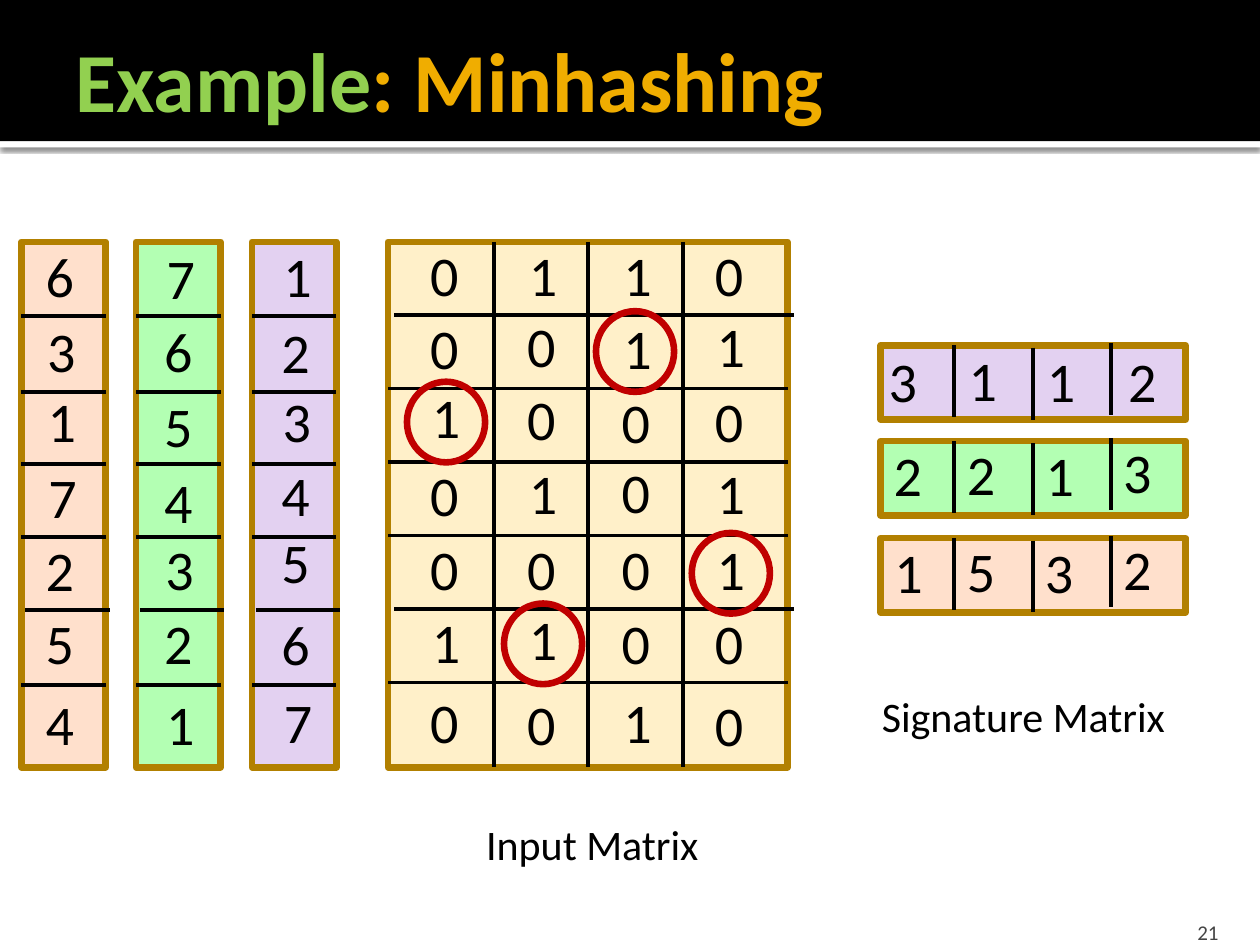
from lxml import etree
from pptx import Presentation
from pptx.dml.color import RGBColor
from pptx.enum.shapes import MSO_CONNECTOR, MSO_SHAPE
from pptx.enum.text import MSO_ANCHOR, MSO_AUTO_SIZE, PP_ALIGN
from pptx.oxml import parse_xml
from pptx.oxml.ns import nsdecls, qn
from pptx.util import Inches, Pt

RECT, OVAL = MSO_SHAPE.RECTANGLE, MSO_SHAPE.OVAL
STRAIGHT = MSO_CONNECTOR.STRAIGHT
FIT, NO_FIT = MSO_AUTO_SIZE.SHAPE_TO_FIT_TEXT, MSO_AUTO_SIZE.NONE
MIDDLE, BOTTOM = MSO_ANCHOR.MIDDLE, MSO_ANCHOR.BOTTOM
LEFT, RIGHT = PP_ALIGN.LEFT, PP_ALIGN.RIGHT

BLACK = RGBColor(0x00, 0x00, 0x00)
WHITE = RGBColor(0xFF, 0xFF, 0xFF)
LIME = RGBColor(0x92, 0xD0, 0x50)
AMBER = RGBColor(0xF0, 0xAD, 0x00)
GREY = RGBColor(0x45, 0x45, 0x45)
BROWN = RGBColor(0xB2, 0x80, 0x00)
RED = RGBColor(0xC0, 0x00, 0x00)
CREAM = RGBColor(0xFF, 0xF0, 0xC9)
PEACH = RGBColor(0xFF, 0xE0, 0xCC)
GREEN = RGBColor(0xB3, 0xFF, 0xB3)
LILAC = RGBColor(0xE3, 0xD1, 0xF1)

FONT = "Calibri"
DIGIT_WIDTHS = {"1": 0.4, "3": 0.41, "7": 0.39}
GRID_TOP, GRID_HEIGHT = 1.92, 4.17

# left, fill, digits, digit centre, digit tops
PERMUTATIONS = [
    (0.17, PEACH, "6317254", 0.48, [1.87, 2.46, 3.02, 3.62, 4.2, 4.78, 5.42]),
    (1.08, GREEN, "7654321", 1.42, [1.88, 2.46, 3.06, 3.66, 4.19, 4.78, 5.42]),
    (2.0, LILAC, "1234567", 2.35, [1.87, 2.47, 3.02, 3.61, 4.14, 4.79, 5.41]),
]
# digits, digit centre, digit tops
INPUT_COLUMNS = [
    ("0010010", 3.53, [1.86, 2.44, 2.99, 3.61, 4.19, 4.77, 5.41]),
    ("1001010", 4.3, [1.86, 2.42, 3.0, 3.59, 4.19, 4.75, 5.42]),
    ("1100001", 5.05, [1.86, 2.44, 3.03, 3.58, 4.19, 4.78, 5.41]),
    ("0101100", 5.79, [1.86, 2.42, 3.02, 3.59, 4.19, 4.78, 5.43]),
]
# top, fill, digits, digit centres, digit tops
SIGNATURES = [
    (2.74, LILAC, "3112", [7.16, 7.79, 8.41, 9.07], [2.7, 2.69, 2.7, 2.7]),
    (3.5, GREEN, "2213", [7.21, 7.79, 8.4, 9.02], [3.45, 3.44, 3.45, 3.42]),
    (4.27, PEACH, "1532", [7.2, 7.79, 8.4, 9.03], [4.22, 4.21, 4.22, 4.19]),
]
CIRCLES = [(4.73, 2.47), (4.0, 4.79), (5.49, 4.23), (3.23, 3.03)]


def add_box(shapes, kind, x, y, w, h, fill=None, line=None):
    sp = shapes.add_shape(kind, Inches(x), Inches(y), Inches(w), Inches(h))
    sp.shadow.inherit = False
    if fill is None:
        sp.fill.background()
    else:
        sp.fill.solid()
        sp.fill.fore_color.rgb = fill
    if line is None:
        sp.line.fill.background()
    else:
        sp.line.color.rgb = line
        sp.line.width = Pt(3.78)
    return sp


def add_rule(shapes, x1, y1, x2, y2):
    cx = shapes.add_connector(STRAIGHT, Inches(x1), Inches(y1), Inches(x2), Inches(y2))
    cx.line.color.rgb = BLACK
    cx.line.width = Pt(2.25)
    etree.SubElement(cx.element.spPr, qn("a:effectLst"))


def add_run(p, text, size, color, bold=False):
    r = p.add_run()
    r.text = text
    r.font.name, r.font.size, r.font.bold = FONT, Pt(size), bold
    r.font.color.rgb = color


def add_label(shapes, text, x, y, w, h, size):
    tf = shapes.add_textbox(Inches(x), Inches(y), Inches(w), Inches(h)).text_frame
    tf.word_wrap = False
    tf.auto_size = FIT
    add_run(tf.paragraphs[0], text, size, BLACK)


def add_digit(shapes, digit, center, top):
    width = DIGIT_WIDTHS.get(digit, 0.43)
    add_label(shapes, digit, center - width / 2, top, width, 0.64, 32)


def add_header(s):
    strip = add_box(s.shapes, RECT, 0, 1.12, 10, 0.05, WHITE)
    strip.element.spPr.remove(strip.element.spPr.find(qn("a:effectLst")))
    strip.element.spPr.append(parse_xml(
        f'<a:effectLst {nsdecls("a")}><a:outerShdw blurRad="{Pt(2.5)}" dist="{Pt(0.8)}"'
        ' dir="5400000" rotWithShape="0"><a:srgbClr val="000000"><a:alpha val="60000"/>'
        '</a:srgbClr></a:outerShdw></a:effectLst>'))
    bar = add_box(s.shapes, RECT, 0, 0, 10, 1.12, BLACK)

    title = s.shapes.title
    bar.element.addnext(title.element)
    title.left, title.top = Inches(0.5), Inches(0.17)
    title.width, title.height = Inches(9.5), Inches(0.92)
    tf = title.text_frame
    tf.auto_size, tf.vertical_anchor = NO_FIT, MIDDLE
    tf.margin_right = Inches(0.05)
    p = tf.paragraphs[0]
    p.alignment = LEFT
    add_run(p, "Example", 48, LIME, True)
    add_run(p, ": Minhashing", 48, AMBER, True)


def add_page_number(s):
    tf = s.shapes.add_textbox(Inches(8.97), Inches(7.2), Inches(0.8), Inches(0.3)).text_frame
    tf.word_wrap = True
    tf.vertical_anchor = BOTTOM
    tf.margin_bottom = 0
    tf.paragraphs[0].alignment = RIGHT
    add_run(tf.paragraphs[0], "21", 12, GREY)


def add_input_matrix(shapes):
    left, width = 3.08, 3.17
    add_box(shapes, RECT, left, GRID_TOP, width, GRID_HEIGHT, CREAM, BROWN)
    for row in range(6):
        x = left + (0.05 if row in (0, 4) else 0)
        y = 2.5 + row * 3.5 / 6
        add_rule(shapes, x, y, x + width, y)
    for x in (3.92, 4.67, 5.42):
        add_rule(shapes, x, GRID_TOP, x, GRID_TOP + GRID_HEIGHT)
    for digits, center, tops in INPUT_COLUMNS:
        for digit, top in zip(digits, tops):
            add_digit(shapes, digit, center, top)


def add_permutation(shapes, left, fill, digits, center, tops):
    width = 0.67
    add_box(shapes, RECT, left, GRID_TOP, width, GRID_HEIGHT, fill, BROWN)
    for row, y in enumerate((2.51, 3.11, 3.68, 4.26, 4.84, 5.44)):
        x = left + (0.03 if row == 4 else 0)
        add_rule(shapes, x, y, x + width, y)
    for digit, digit_top in zip(digits, tops):
        add_digit(shapes, digit, center, digit_top)


def add_signature(shapes, top, fill, digits, centers, tops):
    add_box(shapes, RECT, 6.99, top, 2.42, 0.59, fill, BROWN)
    for x, shift in ((7.57, 0), (8.2, 0.02), (8.82, -0.02)):
        add_rule(shapes, x, top + shift, x, top + shift + 0.57)
    for digit, center, digit_top in zip(digits, centers, tops):
        add_digit(shapes, digit, center, digit_top)


def main():
    prs = Presentation()
    prs.slide_width, prs.slide_height = Inches(10), Inches(7.5)
    s = prs.slides.add_slide(prs.slide_layouts.get_by_name("Title Only"))
    add_header(s)
    add_page_number(s)
    add_input_matrix(s.shapes)
    for permutation in PERMUTATIONS:
        add_permutation(s.shapes.add_group_shape().shapes, *permutation)
    for signature in SIGNATURES:
        add_signature(s.shapes.add_group_shape().shapes, *signature)
    add_label(s.shapes, "Input Matrix", 3.76, 6.45, 1.9, 0.5, 24)
    add_label(s.shapes, "Signature Matrix", 6.9, 5.43, 2.53, 0.5, 24)
    for x, y in CIRCLES:
        add_box(s.shapes, OVAL, x, y, 0.62, 0.64, line=RED)
    prs.save("out.pptx")


if __name__ == "__main__":
    main()
